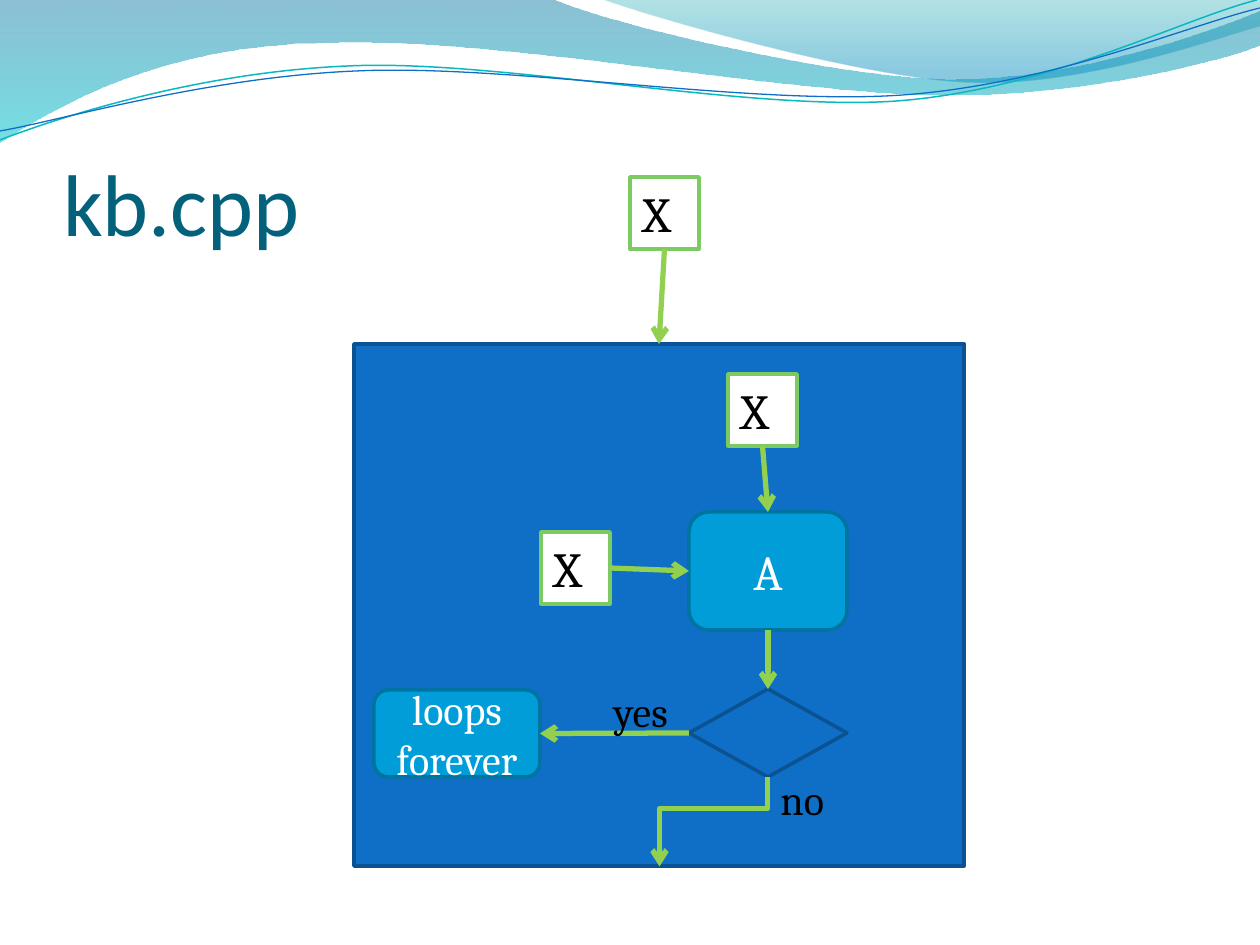
"""Build the kb.cpp flow diagram slide."""
from dataclasses import dataclass
from typing import Optional

from lxml.etree import SubElement
from pptx import Presentation
from pptx.dml.color import RGBColor
from pptx.enum.shapes import MSO_CONNECTOR as CXN, MSO_SHAPE as SHAPE
from pptx.enum.text import MSO_ANCHOR as ANCHOR, MSO_AUTO_SIZE as AUTO, PP_ALIGN as ALIGN
from pptx.oxml.ns import qn
from pptx.util import Emu, Pt

PX = 914400 / 126
TOP, LEFT, BOTTOM, RIGHT = range(4)
COLORS = {
    "title": "04617B", "white": "FFFFFF", "black": "000000",
    "blue": "0F6FC6", "blue_edge": "0B5292",
    "cyan": "009DD9", "cyan_edge": "0074A1",
    "green_edge": "7CCA62", "arrow": "92D050", "teal_line": "0AB8BF",
    "wave_blue": "0074A1", "wave_aqua": "00C6CF",
    "crest_teal": "00A1A9", "crest_blue": "008BBF",
}


@dataclass
class Node:
    name: str
    kind: SHAPE
    box: tuple[int, int, int, int]
    fill: str
    edge: str
    text: str = ""
    size: int = 28
    color: str = "white"
    align: ALIGN = ALIGN.CENTER
    anchor: ANCHOR = ANCHOR.MIDDLE


@dataclass
class Link:
    start: str
    start_site: int
    end: str
    end_site: int


@dataclass
class Stop:
    color: str
    position: float
    alpha: int


@dataclass
class Wave:
    segments: list[tuple[int, ...]]
    stops: Optional[tuple[Stop, Stop]] = None
    line: str = ""
    width: float = 0


def input_box(name: str, x: int, y: int) -> Node:
    return Node(name, SHAPE.RECTANGLE, (x, y, 69, 72), "white", "green_edge",
                "X", 28, "black", ALIGN.LEFT, ANCHOR.TOP)


NODES = [
    Node("program", SHAPE.RECTANGLE, (354, 344, 610, 522), "blue", "blue_edge"),
    Node("a", SHAPE.ROUNDED_RECTANGLE, (689, 512, 158, 118), "cyan", "cyan_edge", "A"),
    input_box("outer_x", 630, 177),
    input_box("left_x", 541, 532),
    input_box("upper_x", 728, 374),
    Node("decision", SHAPE.FLOWCHART_DECISION, (689, 689, 158, 88), "blue", "blue_edge"),
    Node("loop", SHAPE.ROUNDED_RECTANGLE, (374, 690, 166, 87), "cyan", "cyan_edge",
         "loops forever", 24),
]
LINKS = [
    Link("outer_x", BOTTOM, "program", TOP),
    Link("upper_x", BOTTOM, "a", TOP),
    Link("left_x", RIGHT, "a", LEFT),
    Link("a", BOTTOM, "decision", TOP),
    Link("decision", LEFT, "loop", RIGHT),
]
LABELS = [("yes", 601, 679), ("no", 768, 767)]
WAVES = [
    Wave([(0, 0), (554, 0), (600, 21, 837, 79, 955, 79), (1074, 79, 1207, 33, 1260, 11),
          (1260, 45), (1239, 55, 1096, 96, 940, 95), (784, 94, 481, 35, 324, 43),
          (163, 45, 58, 105, 0, 142)],
         (Stop("wave_blue", 0, 45), Stop("wave_aqua", 1, 55))),
    Wave([(604, 0), (641, 14, 859, 78, 969, 82), (1079, 87, 1211, 40, 1260, 26), (1260, 0)],
         (Stop("crest_teal", 0, 30), Stop("crest_blue", 0.8, 45))),
    Wave([(0, 140), (60, 117, 199, 72, 349, 66), (498, 59, 747, 112, 898, 101),
          (1050, 89, 1182, 19, 1257, 0)], line="teal_line", width=0.85),
    Wave([(0, 131), (59, 121, 207, 77, 357, 71), (508, 64, 752, 106, 903, 95),
          (1053, 84, 1186, 26, 1260, 8)], line="blue", width=0.75),
]


def px(*values: int) -> list[Emu]:
    return [Emu(round(v * PX)) for v in values]


def rgb(name: str) -> RGBColor:
    return RGBColor.from_string(COLORS[name])


def write(tf, text: str, size: int, color: str, align=ALIGN.LEFT,
          anchor=ANCHOR.TOP, font: str = "Cambria") -> None:
    tf.text = text
    tf.word_wrap = True
    tf.auto_size = AUTO.NONE
    tf.vertical_anchor = anchor
    p = tf.paragraphs[0]
    p.alignment = align
    for r in p.runs:
        r.font.size, r.font.name = Pt(size), font
        r.font.color.rgb = rgb(color)


def curve(sp, segments: list[tuple[int, ...]]) -> None:
    """Turn each run of three line points into one cubic segment."""
    lines = iter(list(sp._element.spPr.iter(qn("a:lnTo"))))
    for seg in segments:
        first = next(lines)
        if len(seg) == 6:
            first.tag = qn("a:cubicBezTo")
            for _ in range(2):
                line = next(lines)
                first.append(line[0])
                line.getparent().remove(line)


def draw_wave(s, wave: Wave) -> None:
    points = [px(*seg[i:i + 2]) for seg in wave.segments for i in range(0, len(seg), 2)]
    builder = s.shapes.build_freeform(*points[0])
    builder.add_line_segments(points[1:], close=wave.stops is not None)
    sp = builder.convert_to_shape()
    curve(sp, wave.segments[1:])
    sp.shadow.inherit = False
    if wave.stops is None:
        sp.fill.background()
        sp.line.color.rgb = rgb(wave.line)
        sp.line.width = Pt(wave.width)
        return
    sp.line.fill.background()
    sp.fill.gradient()
    sp.fill.gradient_angle = 270
    for target, stop in zip(sp.fill.gradient_stops, wave.stops):
        target.color.rgb = rgb(stop.color)
        target.position = stop.position
    for clr, stop in zip(sp._element.spPr.iter(qn("a:srgbClr")), wave.stops):
        SubElement(clr, qn("a:alpha"), val=str(stop.alpha * 1000))


def draw_node(s, node: Node):
    sp = s.shapes.add_shape(node.kind, *px(*node.box))
    sp.shadow.inherit = False
    sp.fill.solid()
    sp.fill.fore_color.rgb = rgb(node.fill)
    sp.line.color.rgb = rgb(node.edge)
    sp.line.width = Pt(2)
    if node.text:
        write(sp.text_frame, node.text, node.size, node.color, node.align, node.anchor)
    return sp


def draw_arrow(s, kind: CXN, *ends: int):
    c = s.shapes.add_connector(kind, *px(*ends))
    c.line.color.rgb = rgb("arrow")
    c.line.width = Pt(3)
    SubElement(c.line._get_or_add_ln(), qn("a:tailEnd"), type="arrow")
    SubElement(c._element.spPr, qn("a:effectLst"))
    return c


def main() -> None:
    prs = Presentation()
    prs.slide_width, prs.slide_height = px(1260, 945)
    s = prs.slides.add_slide(prs.slide_layouts[5])
    for wave in WAVES:
        draw_wave(s, wave)
    title = s.shapes.title
    title.left, title.top, title.width, title.height = px(63, 97, 1144, 157)
    tf = title.text_frame
    tf.margin_left = tf.margin_right = tf.margin_bottom = 0
    write(tf, "kb.cpp", 50, "title", anchor=ANCHOR.BOTTOM, font="Calibri")
    shapes = {node.name: draw_node(s, node) for node in NODES}
    for link in LINKS:
        c = draw_arrow(s, CXN.STRAIGHT, 0, 0, 0, 0)
        c.begin_connect(shapes[link.start], link.start_site)
        c.end_connect(shapes[link.end], link.end_site)
    bent = draw_arrow(s, CXN.ELBOW, 669, 768, 758, 876)
    spPr = bent._element.spPr
    spPr.find(qn("a:xfrm")).set("rot", "5400000")
    SubElement(spPr.find(qn("a:prstGeom")).find(qn("a:avLst")), qn("a:gd"),
               name="adj1", fmla="val 35000")
    for text, x, y in LABELS:
        write(s.shapes.add_textbox(*px(x, y, 88, 63)).text_frame, text, 24, "black")
    prs.save("out.pptx")


if __name__ == "__main__":
    main()
